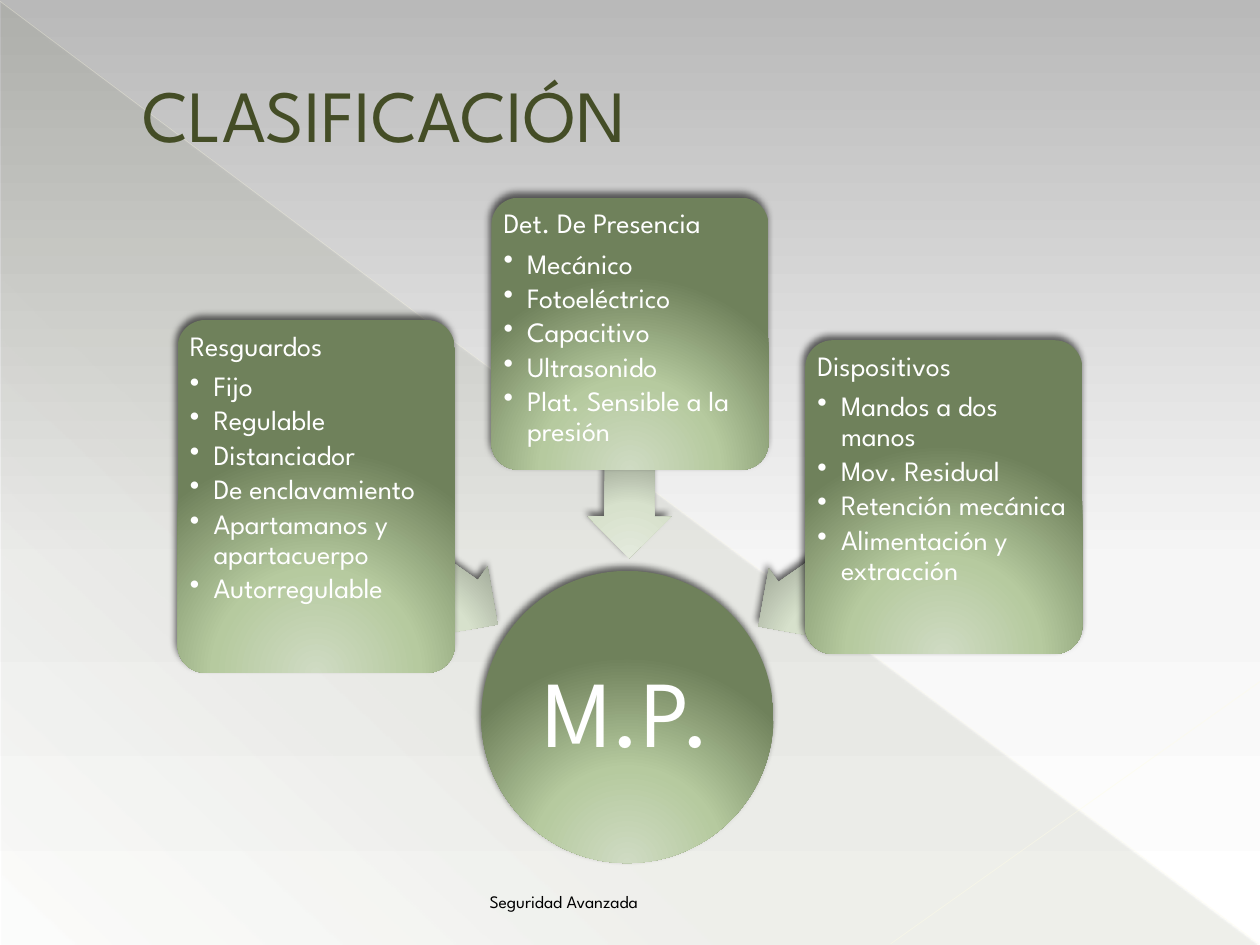
"""Build the slide that classifies machine protections around the M.P. circle."""
from lxml.etree import SubElement
from pptx import Presentation
from pptx.dml.color import RGBColor
from pptx.enum.shapes import MSO_CONNECTOR, MSO_SHAPE
from pptx.enum.text import MSO_ANCHOR, PP_ALIGN
from pptx.oxml.ns import qn
from pptx.util import Pt

COLORS = {"title": "444D26", "light": "FFFFFF", "footer": "000000", "shadow": "000000",
          "diagonal": "FFFDE3", "corner": "FFFDE6"}
GRADIENTS = {
    "sky": [(0, "B9B9B9", 100), (60, "F6F6F6", 100), (100, "FFFFFF", 100)],
    "triangle": [(0, "444D26", 10), (70, "444D26", 8), (100, "444D26", 1)],
    "card": [(0, "CFDBC3", 100), (46, "B6CA9F", 100), (100, "6F815B", 100)],
    "arrow": [(0, "E4EADD", 100), (46, "D7E1CC", 100), (100, "8B9383", 100)],
}
GLOW = {"l": 50, "t": 155, "r": 50, "b": -55}
HEADING = {"line_spacing": 0.9, "space_after": Pt(5.6), "alignment": PP_ALIGN.LEFT}
ITEM = {**HEADING, "space_after": Pt(2.4), "level": 1}
CENTER = {**HEADING, "alignment": PP_ALIGN.CENTER}
MARGINS = ("margin_left", "margin_top", "margin_right", "margin_bottom")


def blend(element, stops, angle=None):
    """Replace the gradient in element by stops, linear at angle or glowing from below."""
    gradient = element.find(".//" + qn("a:gradFill"))
    for child in list(gradient):
        gradient.remove(child)
    gradient.set("rotWithShape", "0")
    stop_list = SubElement(gradient, qn("a:gsLst"))
    for position, color, opacity in stops:
        stop = SubElement(stop_list, qn("a:gs"), pos=str(position * 1000))
        tint = SubElement(stop, qn("a:srgbClr"), val=color)
        if opacity < 100:
            SubElement(tint, qn("a:alpha"), val=str(opacity * 1000))
    if angle is None:
        radial = SubElement(gradient, qn("a:path"), path="circle")
        SubElement(radial, qn("a:fillToRect"), {side: str(share * 1000) for side, share in GLOW.items()})
    else:
        SubElement(gradient, qn("a:lin"), ang=str(angle * 60000), scaled="0")


def write(paragraph, text, size, color, layout):
    """Fill paragraph with one run in the slide font and apply the layout values."""
    for name, value in layout.items():
        setattr(paragraph, name, value)
    run = paragraph.add_run()
    run.text = text
    for name, value in {"name": "League Spartan", "size": Pt(size)}.items():
        setattr(run.font, name, value)
    run.font.color.rgb = RGBColor.from_string(COLORS[color])


presentation = Presentation()
presentation.slide_width, presentation.slide_height = Pt(720), Pt(540)
slide = presentation.slides.add_slide(presentation.slide_layouts[5])
slide.background.fill.gradient()
blend(slide.element, GRADIENTS["sky"], 90)

triangle = slide.shapes.add_shape(MSO_SHAPE.RIGHT_TRIANGLE, Pt(0.7), Pt(1.4), Pt(718.6), Pt(538.6))
triangle.shadow.inherit = False
triangle.line.fill.background()
triangle.fill.gradient()
blend(triangle.element, GRADIENTS["triangle"], 133)

for ends, color, width, opacity in [((0, 0.7, 719.3, 539.3), "diagonal", 0.39, 35),
                                    ((720, 389.5, 509, 539.3), "corner", 0.47, 45)]:
    ray = slide.shapes.add_connector(MSO_CONNECTOR.STRAIGHT, *map(Pt, ends))
    ray.line.width = Pt(width)
    ray.line.color.rgb = RGBColor.from_string(COLORS[color])
    SubElement(ray.element.find(".//" + qn("a:srgbClr")), qn("a:alpha"), val=str(opacity * 1000))
    SubElement(ray.element.spPr, qn("a:effectLst"))

groups = [
    ((169.2, 296.6, 126.7), 215.2, 182.9, 201.6, "Resguardos",
     ["Fijo", "Regulable", "Distanciador", "De enclavamiento", "Apartamanos y apartacuerpo",
      "Autorregulable"]),
    ((295.9, 231.1, 128.2), 270.4, 113, 155.5, "Det. De Presencia",
     ["Mecánico", "Fotoeléctrico", "Capacitivo", "Ultrasonido", "Plat. Sensible a la presión"]),
    ((421.9, 297.4, 128.9), 325.2, 194.4, 179.3, "Dispositivos",
     ["Mandos a dos manos", "Mov. Residual", "Retención mecánica", "Alimentación y extracción"]),
]
parts = [(MSO_SHAPE.OVAL, (275, 326.2, 167, 167), 0, "card", [], [("M.P.", 54, CENTER)])]
for column, (arrow, turn, top, height, heading, items) in enumerate(groups):
    lines = [(heading, 16, HEADING)] + [(item, 16, ITEM) for item in items]
    parts += [
        (MSO_SHAPE.LEFT_ARROW, (*arrow, 47.5), turn, "arrow", [0.6, 0.5], []),
        (MSO_SHAPE.ROUNDED_RECTANGLE, (101.5 + 179.3 * column, top, 158.4, height), 0, "card",
         [0.1], lines),
    ]

for preset, box, turn, palette, adjustments, lines in parts:
    part = slide.shapes.add_shape(preset, *map(Pt, box))
    part.rotation = turn
    for index, value in enumerate(adjustments):
        part.adjustments[index] = value
    part.line.fill.background()
    part.fill.gradient()
    blend(part.element, GRADIENTS[palette])
    part.shadow.inherit = False
    shadow = SubElement(part.element.spPr.find(qn("a:effectLst")), qn("a:outerShdw"),
                        blurRad=str(Pt(4)), dist=str(Pt(3)), dir=str(245 * 60000), rotWithShape="0")
    SubElement(SubElement(shadow, qn("a:srgbClr"), val=COLORS["shadow"]), qn("a:alpha"), val="60000")
    frame = part.text_frame
    frame.word_wrap = True
    frame.vertical_anchor = MSO_ANCHOR.MIDDLE if preset == MSO_SHAPE.OVAL else MSO_ANCHOR.TOP
    for margin in MARGINS:
        setattr(frame, margin, Pt(2.4))
    for index, (text, size, layout) in enumerate(lines):
        paragraph = frame.add_paragraph() if index else frame.paragraphs[0]
        if layout is ITEM:
            properties = paragraph._p.get_or_add_pPr()
            properties.set("marL", str(Pt(13.5)))
            properties.set("indent", str(Pt(-13.5)))
            SubElement(properties, qn("a:buChar"), char="•")
        write(paragraph, text, size, "light", layout)

title = slide.shapes.title
title.element.getparent().append(title.element)
title.left, title.top, title.width, title.height = map(Pt, (36, 20.9, 648, 87.1))
title.text_frame.vertical_anchor = MSO_ANCHOR.MIDDLE
title_line = title.text_frame.paragraphs[0]
title_line._p.get_or_add_pPr().set("marL", str(Pt(38.2)))
write(title_line, "CLASIFICACIÓN", 42, "title", {"alignment": PP_ALIGN.LEFT})

footer = slide.shapes.add_textbox(*map(Pt, (36, 501.1, 335.5, 23.8)))
footer.text_frame.word_wrap = True
footer.text_frame.vertical_anchor = MSO_ANCHOR.BOTTOM
write(footer.text_frame.paragraphs[0], "Seguridad Avanzada", 10, "footer", {"alignment": PP_ALIGN.RIGHT})

presentation.save("out.pptx")
